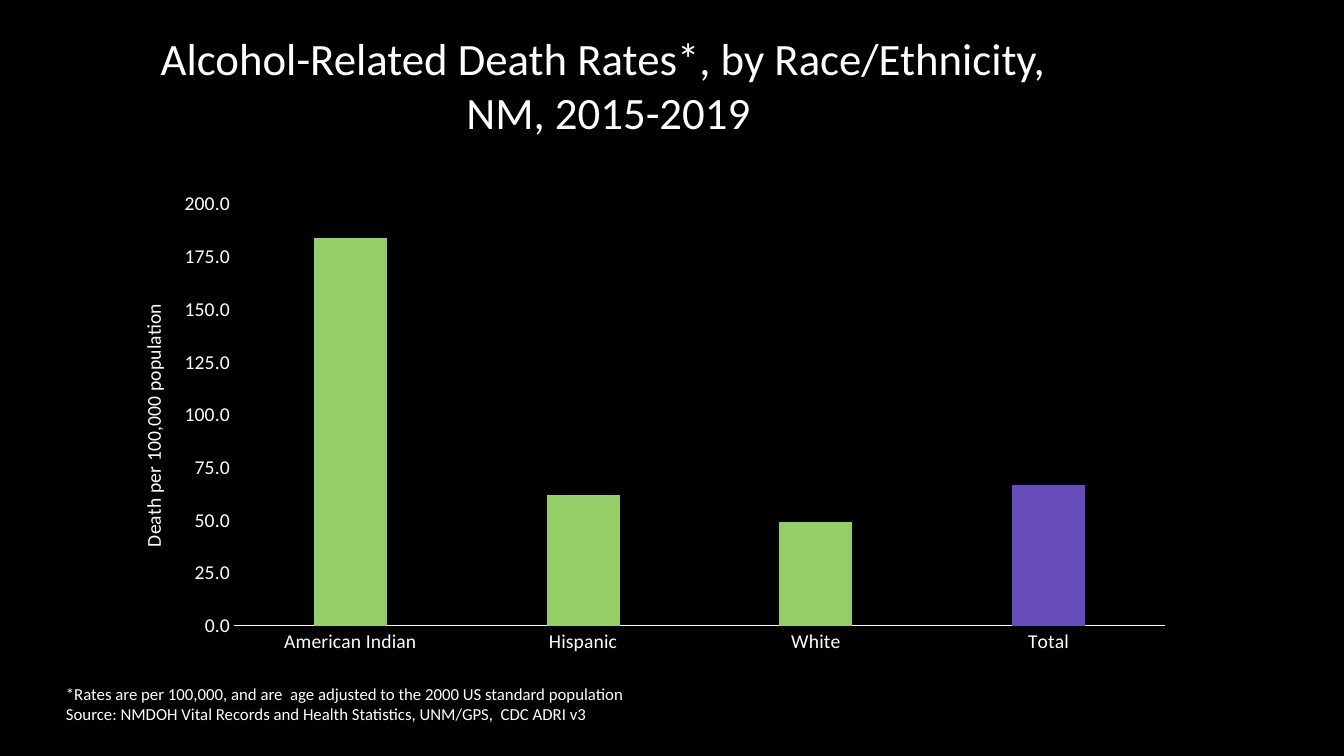
"""Build the slide on alcohol-related death rates by race and ethnicity."""
from lxml import etree
from pptx import Presentation, util as u
from pptx.chart.data import CategoryChartData
from pptx.dml.color import RGBColor
from pptx.enum import chart as ch, text
from pptx.oxml.ns import qn

PX = 9071
FONT = "Calibri"
HUES = {"back": "000000", "ink": "FFFFFF", "bar": "94CE67", "total": "674DBB"}
TITLE = ["Alcohol-Related Death Rates*, by Race/Ethnicity, ", "NM, 2015-2019"]
NOTES = ["*Rates are per 100,000, and are  age adjusted to the 2000 US standard population",
         "Source: NMDOH Vital Records and Health Statistics, UNM/GPS,  CDC ADRI v3"]
TEXTS = [
    (NOTES, (56, 679, 672, 50), 12, text.PP_ALIGN.LEFT),
    (TITLE, (74, 26, 1069, 149), 32, text.PP_ALIGN.CENTER),
]
RATES = {"American Indian": 184, "Hispanic": 62, "White": 49, "Total": 67}
LABEL = "Death per 100,000 population"
CHART = (109, 182, 1078, 481)
PLOT = (234, 204, 931, 422)
LABEL_AT = (136, 300)


def hue(name):
    return RGBColor.from_string(HUES[name])


def paint(fill, name):
    fill.solid()
    fill.fore_color.rgb = hue(name)


def style(font, size):
    font.name, font.size, font.bold = FONT, u.Pt(size), False
    font.color.rgb = hue("ink")


def write(slide, lines, box, size, align):
    frame = slide.shapes.add_textbox(*(n * PX for n in box)).text_frame
    frame.word_wrap = True
    frame.text = "\n".join(lines)
    for para in frame.paragraphs:
        para.alignment = align
        for run in para.runs:
            style(run.font, size)


def place(owner, box, inner=False):
    layout = owner.get_or_add_layout() if hasattr(owner, "get_or_add_layout") else owner.find(qn("c:layout"))
    if layout is None:
        layout = etree.Element(qn("c:layout"))
        owner.insert(0, layout)
    for child in list(layout):
        layout.remove(child)
    manual = etree.SubElement(layout, qn("c:manualLayout"))
    left, top, wide, high = CHART
    parts = [("layoutTarget", "inner")] if inner else []
    parts += [("xMode", "edge"), ("yMode", "edge")]
    parts += [("x", (box[0] - left) / wide), ("y", (box[1] - top) / high)]
    if inner:
        parts += [("w", box[2] / wide), ("h", box[3] / high)]
    for tag, val in parts:
        etree.SubElement(manual, qn("c:" + tag)).set("val", str(val))


def draw(slide):
    data = CategoryChartData(number_format="0.0")
    data.categories = list(RATES)
    data.add_series("Series 1", list(RATES.values()))
    kind = ch.XL_CHART_TYPE.COLUMN_CLUSTERED
    chart = slide.shapes.add_chart(kind, *(n * PX for n in CHART), data).chart
    chart.has_legend = chart.has_title = False
    style(chart.font, 14)
    plot = chart.plots[0]
    plot.gap_width, plot.overlap, plot.vary_by_categories = 219, -27, False
    bars = plot.series[0]
    paint(bars.format.fill, "bar")
    paint(bars.points[list(RATES).index("Total")].format.fill, "total")

    cats, vals = chart.category_axis, chart.value_axis
    for axis in (cats, vals):
        axis.major_tick_mark = axis.minor_tick_mark = ch.XL_TICK_MARK.NONE
        axis.has_major_gridlines = False
        style(axis.tick_labels.font, 14)
    paint(cats.format.line.fill, "ink")
    cats.format.line.width = u.Pt(0.75)
    vals.format.line.fill.background()
    vals.minimum_scale, vals.maximum_scale, vals.major_unit = 0, 200, 25
    vals.tick_labels.number_format = "0.0"
    vals.tick_labels.number_format_is_linked = False

    title = vals.axis_title
    title.text_frame.text = LABEL
    frame = title.text_frame._txBody.find(qn("a:bodyPr"))
    frame.set("rot", "-5400000")
    frame.set("vert", "horz")
    style(title.text_frame.paragraphs[0].runs[0].font, 14)
    place(title._element, LABEL_AT)
    place(chart._chartSpace.chart.plotArea, PLOT, True)


def main():
    deck = Presentation()
    deck.slide_width, deck.slide_height = 1344 * PX, 756 * PX
    slide = deck.slides.add_slide(deck.slide_layouts[6])
    paint(slide.background.fill, "back")
    for item in TEXTS:
        write(slide, *item)
    draw(slide)
    deck.save("out.pptx")


if __name__ == "__main__":
    main()
